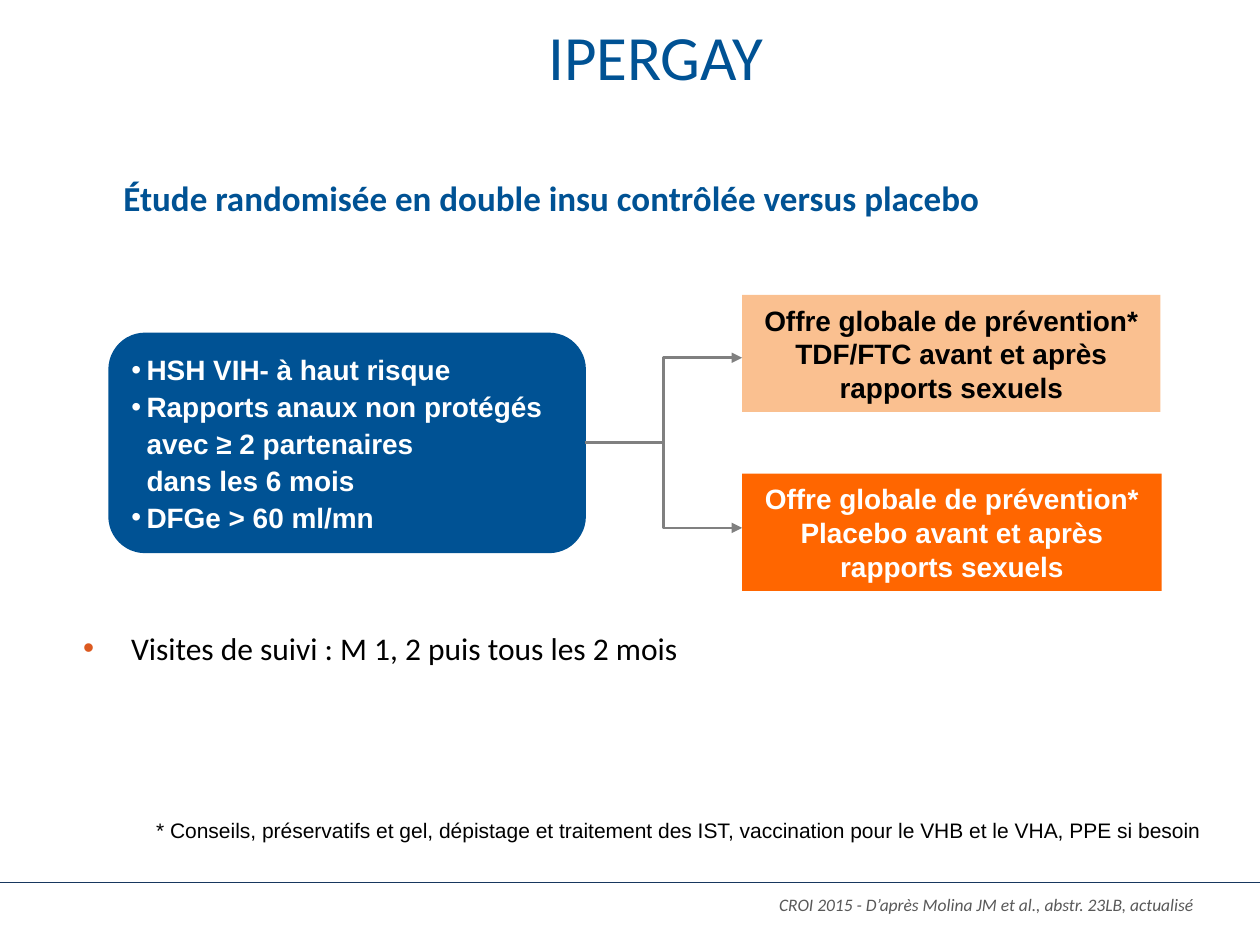
"""Build the IPERGAY trial design slide."""
from dataclasses import dataclass, field

from lxml import etree
from pptx import Presentation
from pptx.dml.color import RGBColor
from pptx.enum.shapes import MSO_CONNECTOR, MSO_SHAPE
from pptx.enum.text import MSO_ANCHOR, MSO_AUTO_SIZE, PP_ALIGN
from pptx.oxml.ns import qn
from pptx.util import Inches, Pt

COLS, ROWS = 100, 75
LEFT, CENTER, RIGHT = PP_ALIGN.LEFT, PP_ALIGN.CENTER, PP_ALIGN.RIGHT
TOP, MIDDLE = MSO_ANCHOR.TOP, MSO_ANCHOR.MIDDLE
RECT, ROUND = MSO_SHAPE.RECTANGLE, MSO_SHAPE.ROUNDED_RECTANGLE
STRAIGHT, ELBOW = MSO_CONNECTOR.STRAIGHT, MSO_CONNECTOR.ELBOW
NO_FIT = MSO_AUTO_SIZE.NONE
BLUE, WHITE, BLACK, GREY = "005294", "FFFFFF", "000000", "808080"
NO_INSETS = {f"margin_{side}": 0 for side in ("left", "top", "right", "bottom")}

prs = Presentation()
prs.slide_width, prs.slide_height = Inches(10), Inches(7.5)


@dataclass
class Text:
    lines: list[str]
    size: float
    color: str
    name: str = "Arial"
    align: int = LEFT
    font: dict = field(default_factory=dict)
    frame: dict = field(default_factory=dict)
    para: dict = field(default_factory=dict)
    indent: float = 0
    bullet_color: str = ""


@dataclass
class Card:
    box: tuple
    kind: int
    fill: str
    text: Text


def rgb(color: str) -> RGBColor:
    return RGBColor.from_string(color)


def x(cols: float) -> int:
    return round(prs.slide_width * cols / COLS)


def y(rows: float) -> int:
    return round(prs.slide_height * rows / ROWS)


def place(box: tuple) -> tuple:
    left, top, width, height = box
    return x(left), y(top), x(width), y(height)


def set_all(target, values: dict) -> None:
    for key, value in values.items():
        setattr(target, key, value)


def set_bullet(p, indent: float, color: str) -> None:
    pPr = p._p.get_or_add_pPr()
    pPr.set("marL", str(Inches(indent)))
    pPr.set("indent", str(-Inches(indent)))
    if not indent:
        etree.SubElement(pPr, qn("a:buNone"))
        return
    if color:
        clr = etree.SubElement(pPr, qn("a:buClr"))
        etree.SubElement(clr, qn("a:srgbClr"), val=color)
    etree.SubElement(pPr, qn("a:buFont"), typeface="Arial")
    etree.SubElement(pPr, qn("a:buChar"), char="•")


def write(sp, text: Text) -> None:
    tf = sp.text_frame
    set_all(tf, {"word_wrap": True, "auto_size": NO_FIT, **text.frame})
    for i, line in enumerate(text.lines):
        p = tf.add_paragraph() if i else tf.paragraphs[0]
        p.text = line
        set_all(p, {"alignment": text.align, **text.para})
        set_bullet(p, text.indent, text.bullet_color)
        for r in p.runs:
            set_all(r.font, {"size": Pt(text.size), "name": text.name, **text.font})
            r.font.color.rgb = rgb(text.color)


def fill_placeholder(sp, box: tuple, text: Text) -> None:
    sp.left, sp.top, sp.width, sp.height = place(box)
    write(sp, text)


def add_text(s, box: tuple, text: Text) -> None:
    write(s.shapes.add_textbox(*place(box)), text)


def add_card(s, card: Card) -> None:
    sp = s.shapes.add_shape(card.kind, *place(card.box))
    sp.shadow.inherit = False
    sp.fill.solid()
    sp.fill.fore_color.rgb = rgb(card.fill)
    sp.line.fill.background()
    write(sp, card.text)


def add_line(s, kind: int, start: tuple, end: tuple, color: str, width: float,
             arrow: bool = False) -> None:
    cx = s.shapes.add_connector(kind, x(start[0]), y(start[1]), x(end[0]), y(end[1]))
    cx.line.color.rgb = rgb(color)
    cx.line.width = Pt(width)
    if arrow:
        etree.SubElement(cx.line._ln, qn("a:tailEnd"), type="triangle")
    etree.SubElement(cx._element.spPr, qn("a:effectLst"))


def arm_text(lines: str, color: str) -> Text:
    return Text([lines], 16, color, align=CENTER, font={"bold": True},
                frame={"vertical_anchor": MIDDLE},
                para={"space_before": Pt(6), "space_after": Pt(4)})


def main() -> None:
    s = prs.slides.add_slide(prs.slide_layouts[3])
    title, heading, visits = s.placeholders
    add_line(s, STRAIGHT, (0, 70), (COLS, 70), "17375E", 0.25)

    fill_placeholder(title, (11.6, 2.6, 80.9, 6.6), Text(
        ["IPERGAY"], 36, BLUE, "Calibri", CENTER,
        frame={**NO_INSETS, "vertical_anchor": MIDDLE},
        para={"line_spacing": Pt(22)}))
    fill_placeholder(heading, (9.8, 14, 83.4, 6.9), Text(
        ["Étude randomisée en double insu contrôlée versus placebo"],
        20, BLUE, "Calibri", font={"bold": True}, frame=NO_INSETS))
    fill_placeholder(visits, (6.6, 49.9, 83.4, 12.2), Text(
        ["Visites de suivi : M 1, 2 puis tous les 2 mois"],
        18, BLACK, "Calibri", frame=NO_INSETS, indent=0.38, bullet_color="DC5A20"))

    criteria = Text(
        ["HSH VIH- à haut risque",
         "Rapports anaux non protégés avec ≥ 2 partenaires\ndans les 6 mois",
         "DFGe > 60 ml/mn"],
        16, WHITE, font={"bold": True}, frame={"vertical_anchor": TOP},
        para={"line_spacing": 1.1}, indent=0.12)
    cards = [
        Card((8.6, 26.4, 37.9, 17.5), ROUND, BLUE, criteria),
        Card((58.9, 23.4, 33.2, 9.3), RECT, "FAC090", arm_text(
            "Offre globale de prévention*\nTDF/FTC avant et après rapports sexuels", BLACK)),
        Card((58.9, 37.6, 33.3, 9.3), RECT, "FF6600", arm_text(
            "Offre globale de prévention* Placebo avant et après rapports sexuels", WHITE)),
    ]
    for card in cards:
        add_card(s, card)
    for row in (28.4, 41.9):
        add_line(s, ELBOW, (46.4, 35.1), (58.9, row), GREY, 1.5, arrow=True)

    add_text(s, (11.4, 64.4, 85.8, 3), Text(
        ["* Conseils, préservatifs et gel, dépistage et traitement des IST, "
         "vaccination pour le VHB et le VHA, PPE si besoin"],
        12, BLACK, frame={"word_wrap": False}))
    add_text(s, (30.3, 70, 64.7, 3.5), Text(
        ["CROI 2015 - D’après Molina JM et al., abstr. 23LB, actualisé"],
        10, "595959", "Calibri", RIGHT, font={"italic": True},
        frame={"vertical_anchor": MIDDLE, "margin_right": Inches(0.03)}))
    prs.save("out.pptx")


if __name__ == "__main__":
    main()
